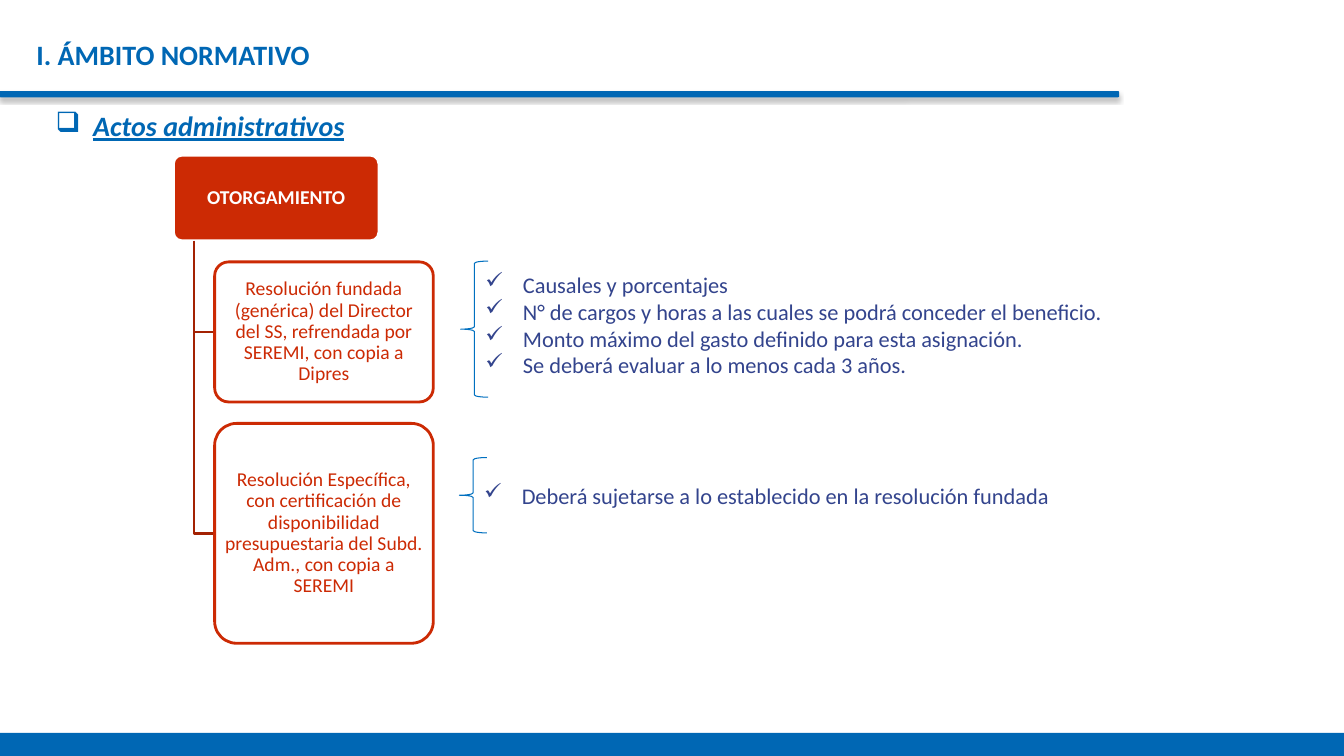
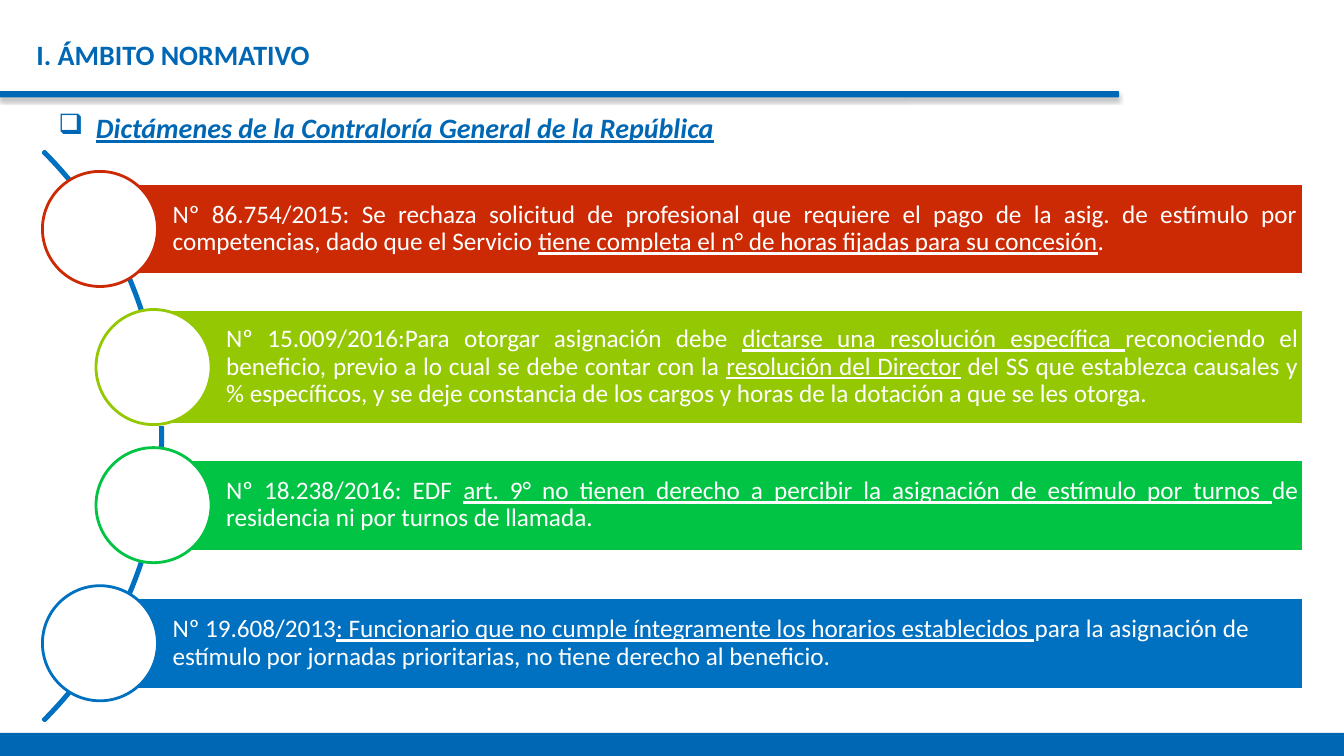
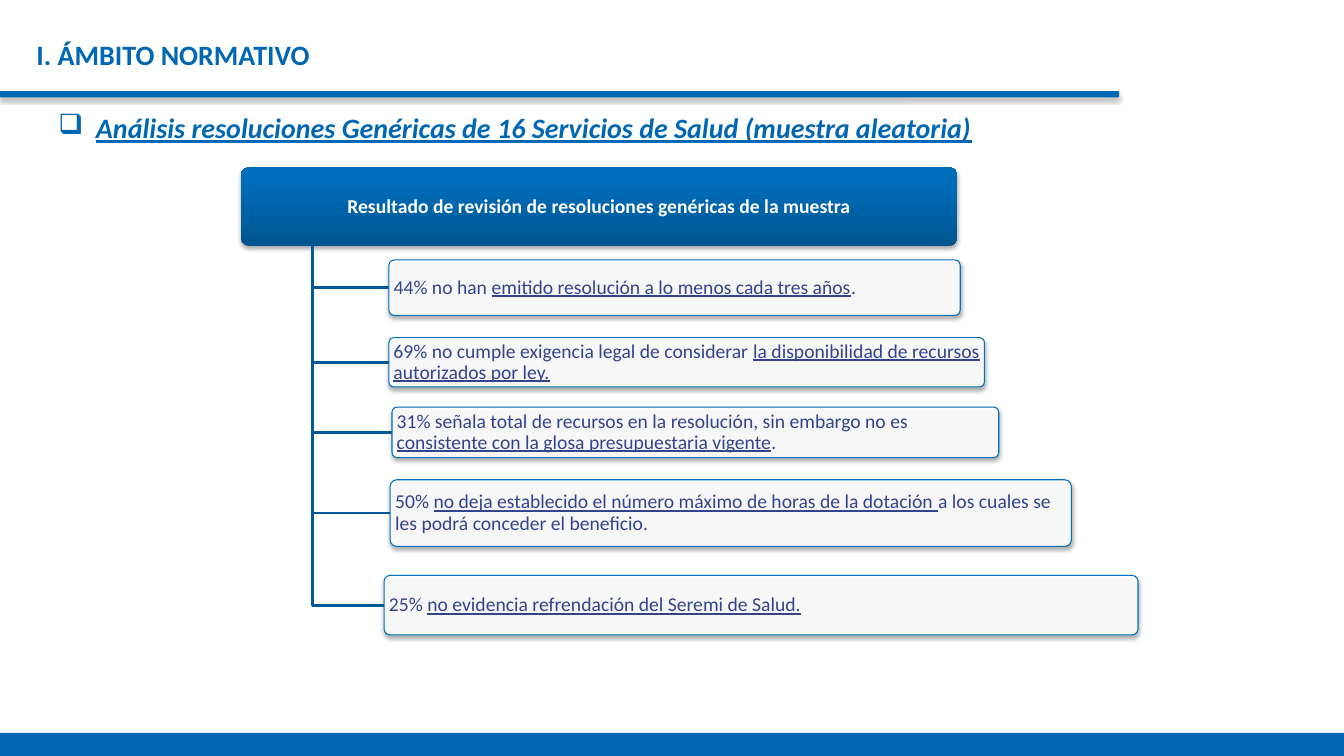
from lxml import etree
from pptx import Presentation
from pptx.dml.color import RGBColor
from pptx.enum.shapes import MSO_SHAPE
from pptx.enum.text import MSO_ANCHOR, PP_ALIGN
from pptx.oxml.ns import qn
from pptx.util import Cm, Pt

RECT, ROUND = MSO_SHAPE.RECTANGLE, MSO_SHAPE.ROUNDED_RECTANGLE
OVAL, ARC, BRACE = MSO_SHAPE.OVAL, MSO_SHAPE.BLOCK_ARC, MSO_SHAPE.LEFT_BRACE
TOP, MID = MSO_ANCHOR.TOP, MSO_ANCHOR.MIDDLE
LEFT, CENTER, JUST = PP_ALIGN.LEFT, PP_ALIGN.CENTER, PP_ALIGN.JUSTIFY

BLUE = RGBColor(0x00, 0x67, 0xB4)
SKY = RGBColor(0x00, 0x70, 0xC0)
DEEP = RGBColor(0x00, 0x5A, 0x9A)
DARK = RGBColor(0x00, 0x54, 0x8F)
LIGHT = RGBColor(0x00, 0x6D, 0xBA)
NAVY = RGBColor(0x33, 0x44, 0x8D)
RED = RGBColor(0xCC, 0x2A, 0x04)
RUST = RGBColor(0xA3, 0x22, 0x03)
LIME = RGBColor(0x94, 0xC8, 0x03)
GREEN = RGBColor(0x01, 0xC4, 0x44)
WHITE = RGBColor(0xFF, 0xFF, 0xFF)

WIDE, HIGH = 33.87, 19.05
FONT = "Calibri"
TITLE = {"size": Pt(20), "bold": True}
HEAD = {"size": Pt(20), "bold": True, "italic": True}
ROOT = {"size": Pt(14), "bold": True}
LEAF = {"size": Pt(14)}
NOTE = {"size": Pt(16)}
RULE = {"size": Pt(18)}
SLIM = (0.08, 0.05, 0.08, 0.05)


def put(item, form):
    for name, value in form.items():
        setattr(item, name, value)


def child(node, tag, **attrs):
    return etree.SubElement(node, qn(tag), attrs)


def shade(shape):
    glow = child(shape._element.spPr.find(qn("a:effectLst")), "a:outerShdw",
                 blurRad="40000", dist="23000", dir="5400000", rotWithShape="0")
    tint = child(glow, "a:srgbClr", val="000000")
    child(tint, "a:alpha", val="35000")


def fade(shape):
    tint = shape._element.spPr.find(qn("a:solidFill"))[0]
    child(tint, "a:alpha", val="90000")


def blend(shape):
    fill = shape.fill
    fill.gradient()
    fill.gradient_angle = 90
    for stop, tint, spot in zip(fill.gradient_stops, (DARK, LIGHT), (0, 0.8)):
        stop.color.rgb = tint
        stop.position = spot


def paint(shape, fill=None, line=None, width=2):
    shape.shadow.inherit = False
    if fill is None:
        shape.fill.background()
    else:
        shape.fill.solid()
        shape.fill.fore_color.rgb = fill
    if line is None:
        shape.line.fill.background()
    else:
        shape.line.color.rgb = line
        shape.line.width = Pt(width)


def draw(slide, kind, box, fill=None, line=None, width=2, adj=()):
    shape = slide.shapes.add_shape(kind, *map(Cm, box))
    for i, value in enumerate(adj):
        shape.adjustments[i] = value
    paint(shape, fill, line, width)
    return shape


def write(shape, paras, font, color, align=LEFT, anchor=TOP,
          pad=(0, 0, 0, 0), space=None, mark=None, lined=1):
    frame = shape.text_frame
    sides = ("margin_left", "margin_top", "margin_right", "margin_bottom")
    put(frame, {"word_wrap": True, "vertical_anchor": anchor,
                **dict(zip(sides, map(Cm, pad)))})
    for i, parts in enumerate(paras):
        para = frame.add_paragraph() if i else frame.paragraphs[0]
        if mark:
            prop = para._p.get_or_add_pPr()
            prop.set("marL", str(Cm(0.95)))
            prop.set("indent", str(-Cm(0.95)))
            child(prop, "a:buChar", char=mark)
        put(para, {"alignment": align, "line_spacing": space})
        for j, part in enumerate(parts):
            run = para.add_run()
            run.text = part
            put(run.font, {"name": FONT, "underline": j % 2 == lined, **font})
            run.font.color.rgb = color


def label(slide, box, paras, font, color, **form):
    write(slide.shapes.add_textbox(*map(Cm, box)), paras, font, color, **form)


def frame(deck, text, left, top):
    slide = deck.slides.add_slide(deck.slide_layouts[6])
    shade(draw(slide, ROUND, (0, 2.31, 28.19, 0.13), BLUE, BLUE, 0.75, (0.12,)))
    draw(slide, RECT, (0, 18.47, WIDE, HIGH - 18.47), BLUE)
    label(slide, (0.92, 0.94, 28.1, 0.86), [["I. ÁMBITO NORMATIVO"]], TITLE, BLUE)
    label(slide, (left, top, 28.27, 0.86), [[text]], HEAD, BLUE, mark="❑", lined=0)
    return slide


def elbow(slide, left, top, right, foot, color):
    pen = slide.shapes.build_freeform(Cm(left), Cm(top))
    pen.add_line_segments([(Cm(left), Cm(foot)), (Cm(right), Cm(foot))], close=False)
    paint(pen.convert_to_shape(), line=color)


def tree(slide, box, text, leaves, color, ink, stem, align, width, glossy):
    left, top, wide, high = box
    base = top + high
    form = {"anchor": MID, "pad": SLIM, "space": 0.9}
    root = draw(slide, ROUND, box, color, None if glossy else WHITE, adj=(0.1,))
    if glossy:
        blend(root)
        shade(root)
    write(root, [[text]], ROOT, WHITE, align=CENTER, **form)
    for dx, dy, w, h, parts in leaves:
        x, y = left + dx, base + dy
        elbow(slide, left + wide / 10, base, x, y + h / 2, stem)
        leaf = draw(slide, ROUND, (x, y, w, h), WHITE, color, width, (0.1,))
        fade(leaf)
        if glossy:
            shade(leaf)
        write(leaf, [parts], LEAF, ink, align=align, **form)


def notes(slide, box, drop, lines):
    left, top, wide, high = box
    draw(slide, BRACE, (left, top, 0.69, high), line=SKY, width=0.75)
    label(slide, (left + 0.62, top + drop, wide - 0.62, high - drop),
          [[line] for line in lines], NOTE, NAVY, align=JUST, mark="✓")


def rulings(slide, box, rows):
    left, top, wide, high = box
    disc, shift, ring = 2.9, 1.35, 20.3
    step = (high - disc) / (len(rows) - 1)
    draw(slide, ARC, (left - 17.27, top + (high - ring) / 2, ring, ring),
         line=SKY, adj=(189, 27, 0.0027))
    for i, (color, tall, align, parts) in enumerate(rows):
        x = left + (shift if 0 < i < len(rows) - 1 else 0)
        y = top + i * step
        start = x + disc / 2
        bar = draw(slide, RECT, (start, y + (disc - tall) / 2, left + wide - start, tall),
                   color, WHITE)
        write(bar, [parts], RULE, WHITE, align=align, anchor=MID,
              pad=(1.83, 0.13, 0.13, 0.13), space=0.9)
        draw(slide, OVAL, (x, y, disc, disc), WHITE, color)


def acts(deck):
    slide = frame(deck, "Actos administrativos", 1.4, 2.74)
    tree(slide, (4.37, 3.91, 5.18, 2.16), "OTORGAMIENTO", [
        (1.04, 0.53, 5.51, 3.53, [
            "Resolución fundada (genérica) del Director del SS, refrendada por SEREMI, "
            "con copia a Dipres"]),
        (1.04, 4.6, 5.51, 5.54, [
            "Resolución Específica, con certificación de disponibilidad presupuestaria "
            "del Subd. Adm., con copia a SEREMI"]),
    ], RED, RED, RUST, CENTER, 2, False)
    notes(slide, (11.61, 6.58, 21, 3.43), 0.25, [
        "Causales y porcentajes",
        "N° de cargos y horas a las cuales se podrá conceder el beneficio.",
        "Monto máximo del gasto definido para esta asignación.",
        "Se deberá evaluar a lo menos cada 3 años."])
    notes(slide, (11.58, 11.53, 21, 1.9), 0.61, [
        "Deberá sujetarse a lo establecido en la resolución fundada"])


def opinions(deck):
    slide = frame(deck, "Dictámenes de la Contraloría General de la República", 1.47, 2.79)
    rulings(slide, (1.07, 4.32, 31.77, 13.34), [
        (RED, 2.31, JUST, [
            "Nº 86.754/2015: Se rechaza solicitud de profesional que requiere el pago de "
            "la asig. de estímulo por competencias, dado que el Servicio ",
            "tiene completa el n° de horas fijadas para su concesión", "."]),
        (LIME, 2.9, JUST, [
            "Nº 15.009/2016:Para otorgar asignación debe ",
            "dictarse una resolución específica ",
            "reconociendo el beneficio, previo a lo cual se debe contar con la ",
            "resolución del Director",
            " del SS que establezca causales y % específicos, y se deje constancia de los "
            "cargos y horas de la dotación a que se les otorga."]),
        (GREEN, 2.31, JUST, [
            "Nº 18.238/2016: EDF ",
            "art. 9° no tienen derecho a percibir la asignación de estímulo por turnos ",
            "de residencia ni por turnos de llamada."]),
        (SKY, 2.31, LEFT, [
            "Nº 19.608/2013",
            ": Funcionario que no cumple íntegramente los horarios establecidos ",
            "para la asignación de estímulo por jornadas prioritarias, no tiene derecho "
            "al beneficio."]),
    ])


def review(deck):
    slide = frame(deck, "Análisis resoluciones Genéricas de 16 Servicios de Salud "
                  "(muestra aleatoria)", 1.47, 2.79)
    tree(slide, (6.07, 4.22, 18.06, 1.98),
         "Resultado de revisión de resoluciones genéricas de la muestra", [
             (3.73, 0.35, 14.4, 1.4, [
                 "44% no han ", "emitido resolución a lo menos cada tres años", "."]),
             (3.73, 2.31, 15.01, 1.24, [
                 "69% no cumple exigencia legal de considerar ",
                 "la disponibilidad de recursos autorizados por ley."]),
             (3.81, 4.06, 15.29, 1.27, [
                 "31% señala total de recursos en la resolución, sin embargo no es ",
                 "consistente con la glosa presupuestaria vigente", "."]),
             (3.76, 5.89, 17.17, 1.68, [
                 "50% ", "no deja establecido el número máximo de horas de la dotación ",
                 "a los cuales se les podrá conceder el beneficio."]),
             (3.61, 8.3, 19, 1.5, [
                 "25% ", "no evidencia refrendación del Seremi de Salud."]),
         ], SKY, NAVY, DEEP, LEFT, 0.75, True)


def main():
    deck = Presentation()
    put(deck, {"slide_width": Cm(WIDE), "slide_height": Cm(HIGH)})
    for build in (acts, opinions, review):
        build(deck)
    deck.save("out.pptx")


if __name__ == "__main__":
    main()
